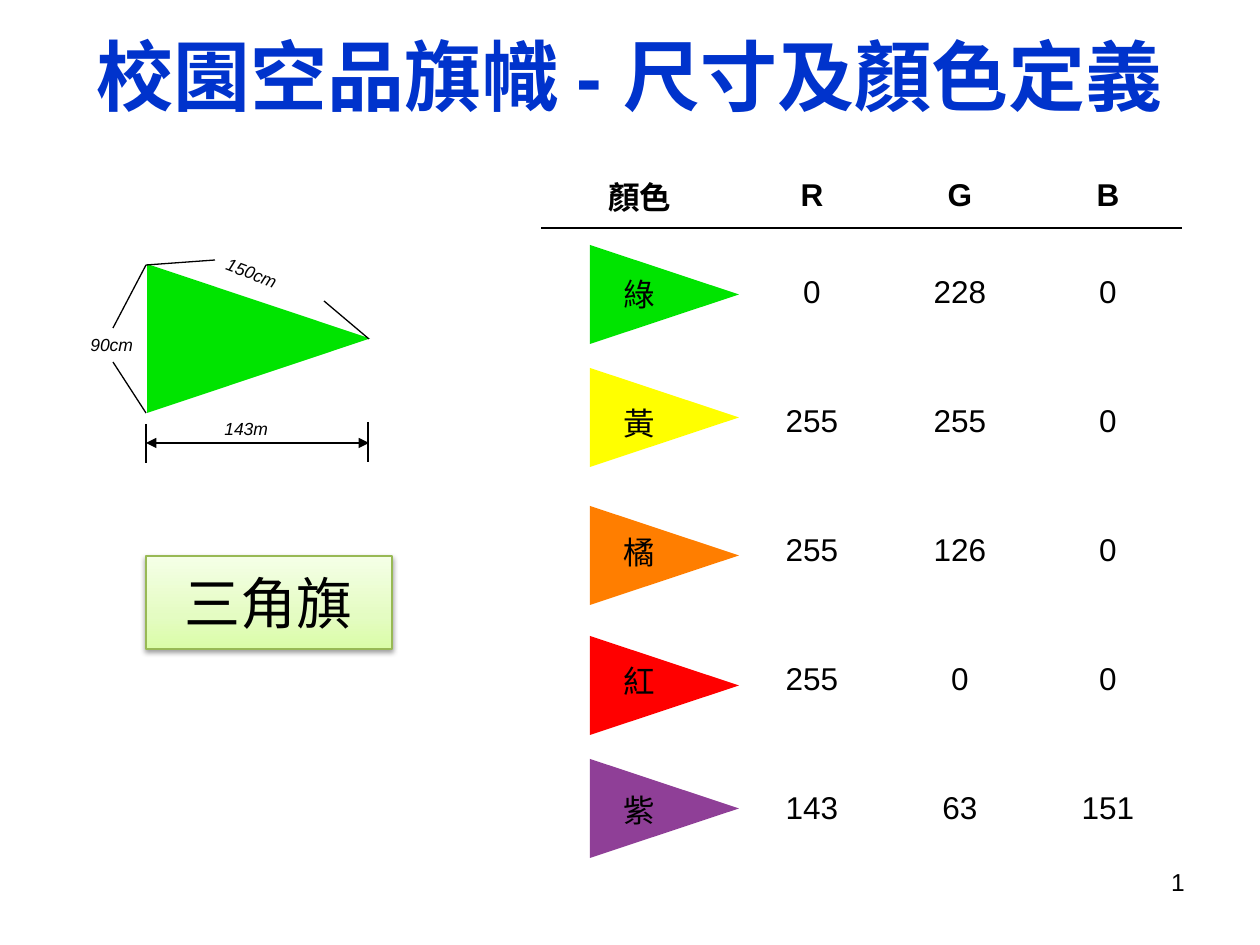
from copy import deepcopy

from lxml import etree
from pptx import Presentation
from pptx.dml.color import RGBColor
from pptx.enum.shapes import MSO_CONNECTOR, MSO_SHAPE
from pptx.enum.text import MSO_ANCHOR, PP_ALIGN
from pptx.oxml.ns import qn
from pptx.util import Emu, Pt

PX = 914400 / 126
FONT = "Arial"
NO_STYLE_NO_GRID = "{2D5ABB26-0587-4C30-8999-92F81FD0307C}"
LEFT, CENTER, RIGHT = PP_ALIGN.LEFT, PP_ALIGN.CENTER, PP_ALIGN.RIGHT
MIDDLE, TOP = MSO_ANCHOR.MIDDLE, MSO_ANCHOR.TOP
TRIANGLE, RECTANGLE = MSO_SHAPE.ISOSCELES_TRIANGLE, MSO_SHAPE.RECTANGLE
STRAIGHT = MSO_CONNECTOR.STRAIGHT

BLACK = RGBColor(0, 0, 0)
TITLE_BLUE = RGBColor(0x00, 0x33, 0xCC)
LABEL_BORDER = RGBColor(0x98, 0xB9, 0x55)
LABEL_GRADIENT = [
    (0, RGBColor(0xDA, 0xFD, 0xA7)),
    (0.35, RGBColor(0xE4, 0xFC, 0xC2)),
    (1, RGBColor(0xF5, 0xFF, 0xE7)),
]

# Flag name, R, G, B and top of the flag in px
HEADINGS = ["顏色", "R", "G", "B"]
FLAGS = [
    ("綠", (0, 228, 0), 245),
    ("黃", (255, 255, 0), 368),
    ("橘", (255, 126, 0), 506),
    ("紅", (255, 0, 0), 636),
    ("紫", (143, 63, 151), 759),
]

# Dimension drawing: start and end in px
GUIDE_LINES = [
    (146, 265, 215, 260),
    (324, 301, 369, 339),
    (146, 265, 113, 328),
    (146, 413, 113, 362),
    (146, 424, 146, 463),
    (368, 422, 368, 462),
]
DIMENSION_TEXTS = [
    ("150cm", (212, 263, 116, 34), 21),
    ("90cm", (78, 328, 69, 34), 0),
    ("143m", (212, 412, 87, 34), 0),
]


def px(*lengths):
    return [Emu(round(length * PX)) for length in lengths]


def write(frame, text, align=LEFT, **formats):
    """Put one formatted paragraph into a text frame."""
    frame.text = text
    paragraph = frame.paragraphs[0]
    paragraph.alignment = align
    font = paragraph.runs[0].font
    font.color.rgb = formats.pop("color", BLACK)
    for name, value in {"name": FONT, **formats}.items():
        setattr(font, name, value)


def add_title(slide, text):
    title = slide.shapes.title
    title.left, title.top, title.width, title.height = px(63, -4, 1134, 158)
    frame = title.text_frame
    frame.vertical_anchor = MIDDLE
    frame.margin_left = frame.margin_right = 0
    write(frame, text, CENTER, size=Pt(44), bold=True, color=TITLE_BLUE)


def add_text(slide, text, box, align=LEFT, rotation=0, wrap=False, **formats):
    shape = slide.shapes.add_textbox(*px(*box))
    shape.rotation = rotation
    shape.text_frame.word_wrap = wrap
    shape.text_frame.vertical_anchor = TOP
    write(shape.text_frame, text, align, **formats)


def add_flag(slide, left, top, width, height, color):
    """Triangle pointing right; the box is given as it looks after turning."""
    shift = (width - height) / 2
    flag = slide.shapes.add_shape(
        TRIANGLE, *px(left + shift, top - shift, height, width))
    flag.rotation = 90
    flag.shadow.inherit = False
    flag.fill.solid()
    flag.fill.fore_color.rgb = color
    flag.line.fill.background()


def add_line(slide, points, arrows=False):
    line = slide.shapes.add_connector(STRAIGHT, *px(*points))
    line.line.color.rgb = BLACK
    line.line.width = Pt(0.75)
    properties = line._element.spPr
    if arrows:
        outline = properties.find(qn("a:ln"))
        for end in ("a:headEnd", "a:tailEnd"):
            etree.SubElement(outline, qn(end), type="triangle")
    etree.SubElement(properties, qn("a:effectLst"))


def add_bottom_border(cell):
    border = etree.Element(qn("a:lnB"), w=str(Pt(1)))
    fill = etree.SubElement(border, qn("a:solidFill"))
    etree.SubElement(fill, qn("a:srgbClr"), val=str(BLACK))
    cell._tc.get_or_add_tcPr().insert(0, border)


def add_color_table(slide):
    rows = [HEADINGS] + [[name, *rgb] for name, rgb, _ in FLAGS]
    table = slide.shapes.add_table(
        len(rows), len(HEADINGS), *px(541, 164, 641, 709)).table
    table.first_row = table.horz_banding = False
    table._tbl.tblPr.find(qn("a:tableStyleId")).text = NO_STYLE_NO_GRID
    for column, width in zip(table.columns, px(197, 148, 148, 148)):
        column.width = width
    for row, height in zip(table.rows, px(64, *[129] * len(FLAGS))):
        row.height = height
    for row_index, values in enumerate(rows):
        for column_index, value in enumerate(values):
            cell = table.cell(row_index, column_index)
            cell.vertical_anchor = MIDDLE
            cell.fill.background()
            write(cell.text_frame, str(value), CENTER,
                  size=Pt(18), bold=row_index == 0)
            if row_index == 0:
                add_bottom_border(cell)


def add_gradient_label(slide, text, box):
    label = slide.shapes.add_shape(RECTANGLE, *px(*box))
    label.line.color.rgb = LABEL_BORDER
    label.line.width = Pt(0.75)

    # Three-stop gradient, running upwards
    label.fill.gradient()
    label.fill.gradient_angle = 90
    properties = label._element.spPr
    stop_list = properties.find(".//" + qn("a:gsLst"))
    stop_list.insert(1, deepcopy(stop_list[0]))
    for stop, (position, color) in zip(label.fill.gradient_stops, LABEL_GRADIENT):
        stop.position = position
        stop.color.rgb = color

    # Soft shadow below
    label.shadow.inherit = False
    shadow = etree.SubElement(
        properties.find(qn("a:effectLst")), qn("a:outerShdw"),
        blurRad="40000", dist="20000", dir="5400000", rotWithShape="0")
    shadow_color = etree.SubElement(shadow, qn("a:srgbClr"), val=str(BLACK))
    etree.SubElement(shadow_color, qn("a:alpha"), val="38000")

    frame = label.text_frame
    frame.vertical_anchor = MIDDLE
    frame.margin_left, frame.margin_right = px(25, 25)
    frame.margin_top, frame.margin_bottom = px(13, 13)
    write(frame, text, CENTER, size=Pt(32))


def main():
    presentation = Presentation()
    presentation.slide_width, presentation.slide_height = px(1260, 945)
    slide = presentation.slides.add_slide(presentation.slide_layouts[5])

    # Title and slide number
    add_title(slide, "校園空品旗幟 - 尺寸及顏色定義")
    add_text(slide, "1", (903, 861, 294, 66), RIGHT, wrap=True, size=Pt(14))

    # Flag with its dimensions
    add_flag(slide, 147, 264, 223, 149, RGBColor(*FLAGS[0][1]))
    for points in GUIDE_LINES:
        add_line(slide, points)
    add_line(slide, (146, 443, 369, 443), arrows=True)
    for text, box, rotation in DIMENSION_TEXTS:
        add_text(slide, text, box, rotation=rotation, size=Pt(10), italic=True)

    # Coloured flags behind the colour table
    for _, rgb, top in FLAGS:
        add_flag(slide, 590, top, 149, 99, RGBColor(*rgb))
    add_color_table(slide)

    # Flag type
    add_gradient_label(slide, "三角旗", (146, 556, 246, 93))

    presentation.save("out.pptx")


if __name__ == "__main__":
    main()
